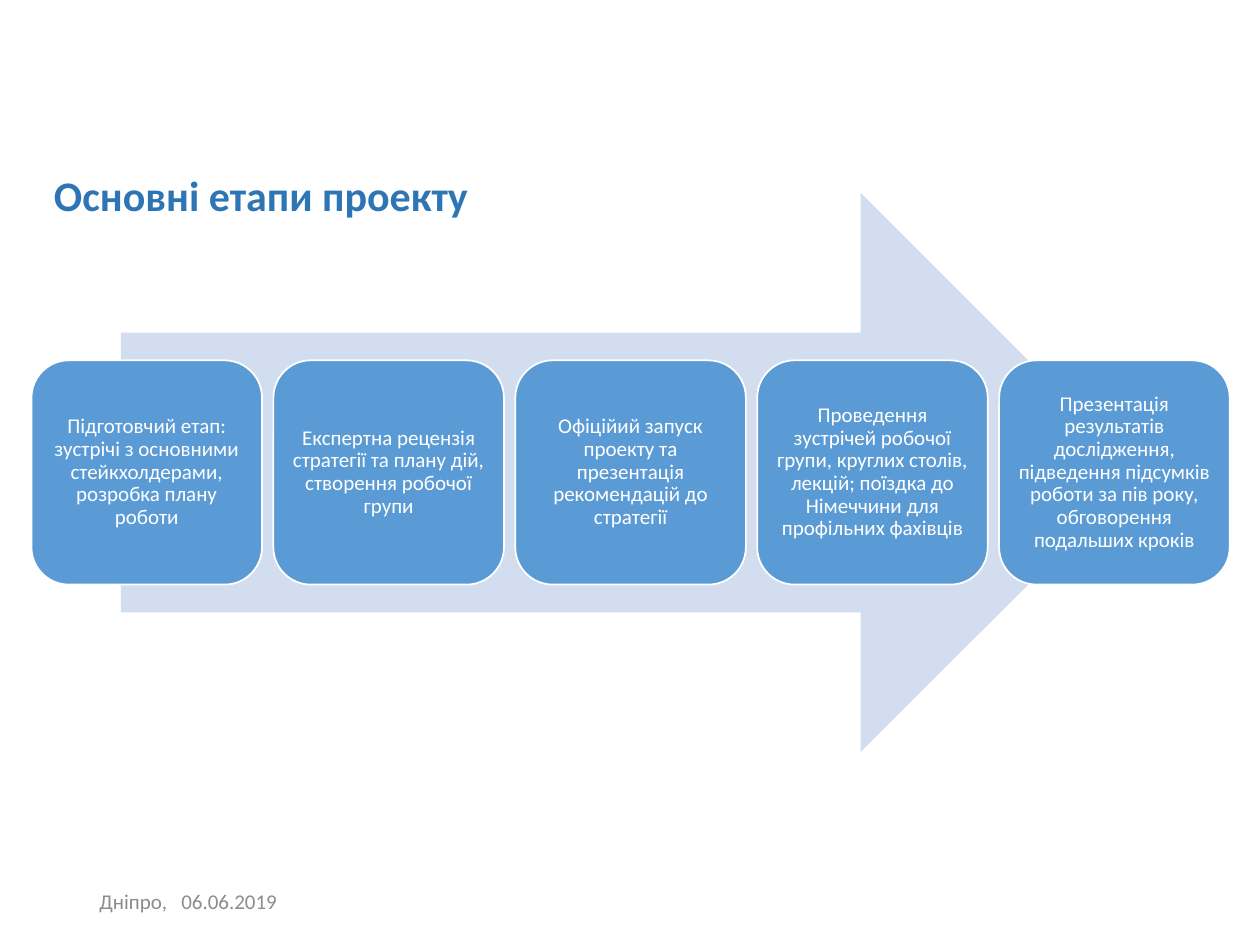
from lxml import etree
from pptx import Presentation
from pptx.dml.color import RGBColor
from pptx.enum.shapes import MSO_SHAPE as Preset
from pptx.enum.text import MSO_ANCHOR as Anchor, MSO_AUTO_SIZE as AutoSize, PP_ALIGN as Align
from pptx.oxml.ns import qn
from pptx.util import Inches, Pt

STAGES = [
    "Підготовчий етап: зустрічі з основними стейкхолдерами, розробка плану роботи",
    "Експертна рецензія стратегії та плану дій, створення робочої групи",
    "Офіційий запуск проекту та презентація рекомендацій до стратегії",
    "Проведення зустрічей робочої групи, круглих столів, лекцій; поїздка до "
    "Німеччини для профільних фахівців",
    "Презентація результатів дослідження, підведення підсумків роботи за пів року, "
    "обговорення подальших кроків",
]


def color(hex_value):
    return RGBColor.from_string(hex_value)


def apply_format(target, values):
    for name, value in values.items():
        setattr(target, name, value)


class StageSlide:
    font_name = "Calibri"
    title_color = "2E75B6"
    footer_color = "8C8C8C"
    arrow_color = "D2DEEF"
    card_color = "5B9BD5"
    white = "FFFFFF"

    def __init__(self, slide):
        self.slide = slide

    def fill_text(self, shape, text, size, hex_value, frame_format=None, bold=False, tab=None):
        frame = shape.text_frame
        apply_format(frame, {"word_wrap": True, **(frame_format or {})})
        paragraph = frame.paragraphs[0]
        paragraph.text = text
        if tab is not None:
            tabs = etree.SubElement(paragraph._p.get_or_add_pPr(), qn("a:tabLst"))
            etree.SubElement(tabs, qn("a:tab"), pos=str(Inches(tab)), algn="l")
        apply_format(paragraph.font, {"name": self.font_name, "size": Pt(size), "bold": bold})
        paragraph.font.color.rgb = color(hex_value)
        return paragraph

    def text(self, box, text, size, hex_value, **options):
        shape = self.slide.shapes.add_textbox(*map(Inches, box))
        self.fill_text(shape, text, size, hex_value, **options)

    def shape(self, preset, box, fill, line=None):
        shape = self.slide.shapes.add_shape(preset, *map(Inches, box))
        shape.shadow.inherit = False
        shape.fill.solid()
        shape.fill.fore_color.rgb = color(fill)
        if line:
            shape.line.color.rgb = color(line)
            shape.line.width = Pt(1)
        else:
            shape.line.fill.background()
        return shape

    def card(self, box, text):
        shape = self.shape(Preset.ROUNDED_RECTANGLE, box, self.card_color, self.white)
        sides = ("margin_left", "margin_top", "margin_right", "margin_bottom")
        frame_format = dict.fromkeys(sides, Inches(0.05))
        frame_format["vertical_anchor"] = Anchor.MIDDLE
        paragraph = self.fill_text(shape, text, 12, self.white, frame_format)
        apply_format(paragraph, {"alignment": Align.CENTER, "line_spacing": 0.9})


def main():
    presentation = Presentation()
    apply_format(presentation, {"slide_width": Inches(10), "slide_height": Inches(7.5)})
    stage_slide = StageSlide(presentation.slides.add_slide(presentation.slide_layouts[6]))

    # Title and footer
    stage_slide.text((0.33, 1.3, 9.33, 0.5), "Основні етапи проекту", 24,
                     stage_slide.title_color, bold=True,
                     frame_format={"auto_size": AutoSize.SHAPE_TO_FIT_TEXT})
    stage_slide.text((0.69, 6.95, 2.25, 0.4), "Дніпро,\t06.06.2019", 12,
                     stage_slide.footer_color, tab=0.65,
                     frame_format={"vertical_anchor": Anchor.MIDDLE})

    # Arrow behind the stages
    stage_slide.shape(Preset.RIGHT_ARROW, (0.96, 1.53, 8.09, 4.44), stage_slide.arrow_color)

    # Stage cards, evenly spaced
    left, top, width, height, gap = 0.25, 2.86, 1.83, 1.78, 0.09
    for index, stage in enumerate(STAGES):
        stage_slide.card((left + index * (width + gap), top, width, height), stage)

    presentation.save("out.pptx")


if __name__ == "__main__":
    main()
